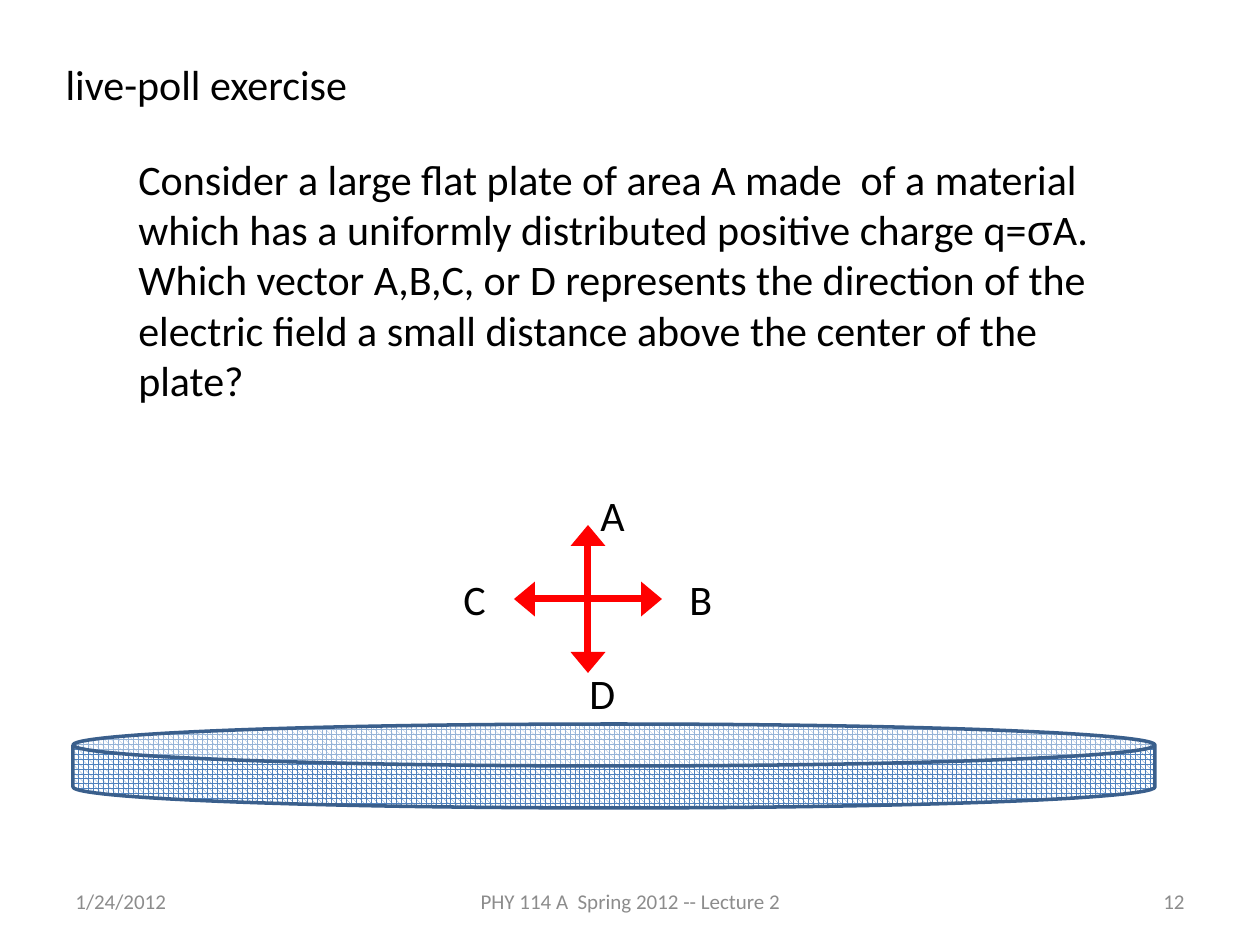
from lxml import etree
from pptx import Presentation
from pptx import util as u
from pptx.dml import color
from pptx.enum import dml, shapes, text
from pptx.oxml import ns

COLORS = {
    "ink": "000000",
    "muted": "8C8C8C",
    "arrow": "FF0000",
    "plate": "4F81BD",
    "back": "FFFFFF",
    "edge": "3A5F8C",
}
LEFT, MID, RIGHT = text.PP_ALIGN.LEFT, text.PP_ALIGN.CENTER, text.PP_ALIGN.RIGHT
TOP, CENTER = text.MSO_ANCHOR.TOP, text.MSO_ANCHOR.MIDDLE


def px(n):
    return u.Emu(round(n * 914400 / 126))


def rgb(name):
    return color.RGBColor.from_string(COLORS[name])


def apply(target, values):
    for key, value in values.items():
        setattr(target, key, value)


def write(shape, runs, size=24, tint="ink", align=LEFT, anchor=TOP):
    frame = shape.text_frame
    apply(frame, {
        "word_wrap": True,
        "auto_size": text.MSO_AUTO_SIZE.NONE,
        "vertical_anchor": anchor,
    })
    para = frame.paragraphs[0]
    para.alignment = align
    for words, face in runs:
        run = para.add_run()
        run.text = words
        apply(run.font, {"name": face, "size": u.Pt(size)})
        run.font.color.rgb = rgb(tint)


def add_text(slide, box, runs, **style):
    write(slide.shapes.add_textbox(*map(px, box)), runs, **style)


def add_title(slide, box, words):
    title = slide.shapes.title
    apply(title, dict(zip(("left", "top", "width", "height"), map(px, box))))
    write(title, [(words, "Calibri")])


def add_plate(slide, box):
    plate = slide.shapes.add_shape(shapes.MSO_SHAPE.CAN, *map(px, box))
    plate.shadow.inherit = False
    plate.adjustments[0] = 0.5
    plate.fill.patterned()
    plate.fill.pattern = dml.MSO_PATTERN.SPHERE
    plate.fill.fore_color.rgb = rgb("plate")
    plate.fill.back_color.rgb = rgb("back")
    plate.line.color.rgb = rgb("edge")
    plate.line.width = u.Pt(2)


def add_arrow(slide, start, end):
    arrow = slide.shapes.add_connector(
        shapes.MSO_CONNECTOR.STRAIGHT, *map(px, start + end))
    arrow.line.color.rgb = rgb("arrow")
    arrow.line.width = u.Pt(4)
    etree.SubElement(arrow.line._get_or_add_ln(), ns.qn("a:tailEnd"),
                     type="triangle", w="lg")
    etree.SubElement(arrow._element.spPr, ns.qn("a:effectLst"))


def add_cross(slide, x, y, reach):
    vectors = [
        ("D", 0, 1, 577, 661),
        ("A", 0, -1, 588, 483),
        ("B", 1, 0, 677, 567),
        ("C", -1, 0, 451, 567),
    ]
    for name, dx, dy, left, top in vectors:
        add_arrow(slide, (x, y), (x + dx * reach, y + dy * reach))
        add_text(slide, (left, top, 78, 63), [(name, "Calibri")])


def add_footer(slide):
    parts = [
        ("1/24/2012", 63, 294, LEFT),
        ("PHY 114 A  Spring 2012 -- Lecture 2", 431, 399, MID),
        ("12", 903, 294, RIGHT),
    ]
    for words, left, width, align in parts:
        add_text(slide, (left, 876, width, 50), [(words, "Calibri")],
                 size=12, tint="muted", align=align, anchor=CENTER)


def main():
    deck = Presentation()
    apply(deck, {"slide_width": px(1260), "slide_height": px(945)})
    slide = deck.slides.add_slide(deck.slide_layouts[5])
    add_footer(slide)
    add_title(slide, (53, 52, 725, 63), "live-poll exercise")
    add_plate(slide, (73, 724, 1082, 84))
    add_text(slide, (126, 147, 998, 267), [
        ("Consider a large flat plate of area A made  of a material which has "
         "a uniformly distributed positive charge q=", "Calibri"),
        ("σ", "Arial"),
        ("A. Which vector A,B,C, or D represents the direction of the electric "
         "field a small distance above the center of the plate?", "Calibri"),
    ])
    add_cross(slide, 588, 599, 74)
    deck.save("out.pptx")


if __name__ == "__main__":
    main()
